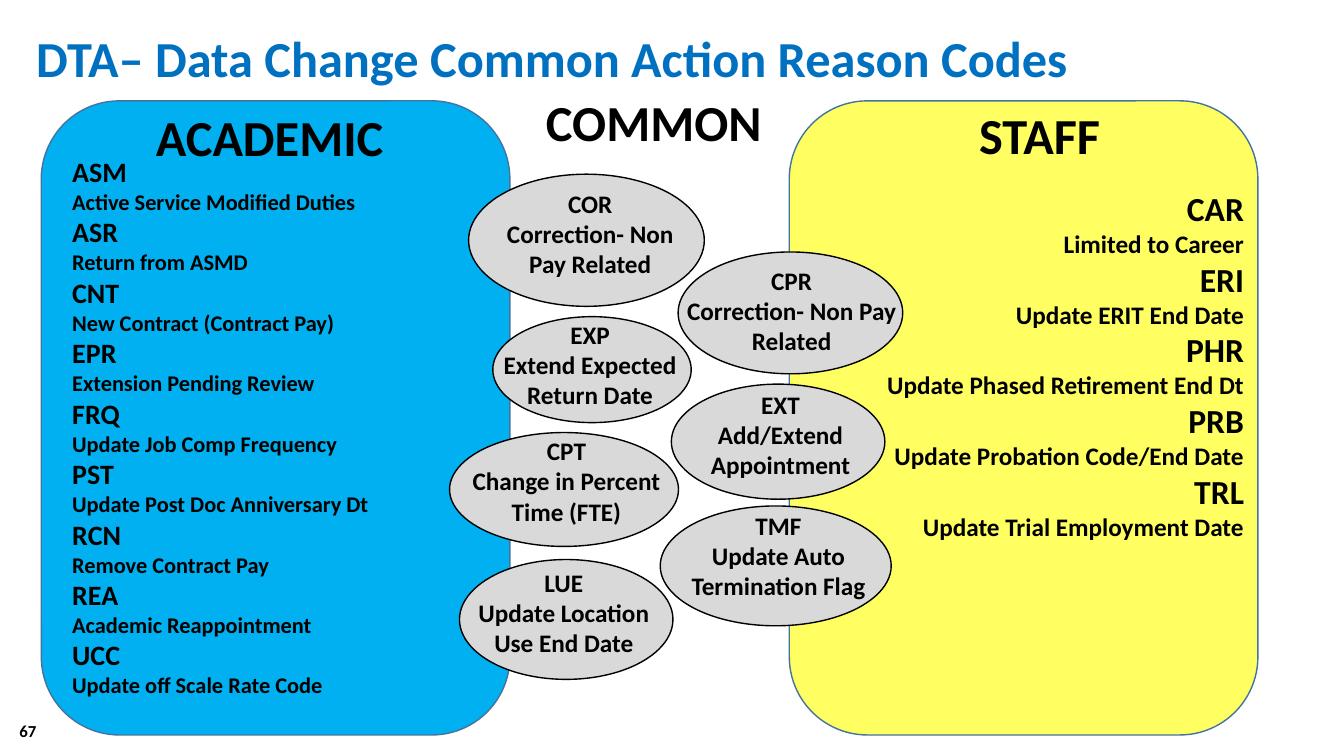
from dataclasses import dataclass

from lxml import etree
from pptx import Presentation
from pptx.dml.color import RGBColor
from pptx.enum.shapes import MSO_SHAPE
from pptx.enum.text import MSO_ANCHOR, PP_ALIGN
from pptx.oxml.ns import qn
from pptx.util import Cm, Pt

ELLIPSE = MSO_SHAPE.OVAL
ROUNDED = MSO_SHAPE.ROUNDED_RECTANGLE
LEFT, CENTER, RIGHT = PP_ALIGN.LEFT, PP_ALIGN.CENTER, PP_ALIGN.RIGHT
TOP, MIDDLE = MSO_ANCHOR.TOP, MSO_ANCHOR.MIDDLE


@dataclass(frozen=True)
class Theme:
    font: str = "Calibri"
    title: str = "0070C0"
    ink: str = "000000"
    academic: str = "00B0F0"
    staff: str = "FFFF00"
    panel_edge: str = "43739E"
    bubble: str = "D9D9D9"
    heading_size: int = 36
    bubble_size: int = 18
    number_size: int = 12
    academic_sizes: tuple = (20, 16)
    staff_sizes: tuple = (24, 18)


THEME = Theme()

ACADEMIC_CODES = [
    ("ASM", "Active Service Modified Duties"),
    ("ASR", "Return from ASMD"),
    ("CNT", "New Contract (Contract Pay)"),
    ("EPR", "Extension Pending Review"),
    ("FRQ", "Update Job Comp Frequency"),
    ("PST", "Update Post Doc Anniversary Dt"),
    ("RCN", "Remove Contract Pay"),
    ("REA", "Academic Reappointment"),
    ("UCC", "Update off Scale Rate Code"),
]
STAFF_CODES = [
    ("CAR", "Limited to Career"),
    ("ERI", "Update ERIT End Date"),
    ("PHR", "Update Phased Retirement End Dt"),
    ("PRB", "Update Probation Code/End Date"),
    ("TRL", "Update Trial Employment Date"),
]
COMMON_CODES = [
    ("COR", "Correction- Non Pay Related", (11.81, 4.39, 5.94, 3.33), (0.59, 0.23, 4.95, 3.94)),
    ("CPR", "Correction- Non Pay Related", (17.09, 6.35, 5.66, 3.07), (-0.33, 0.2, 6.38, 2.57)),
    ("EXT", "Add/Extend Appointment", (16.92, 9.68, 5.38, 2.9), (0.25, 0, 5, 2.57)),
    ("CPT", "Change in Percent Time (FTE)", (11.33, 10.9, 5.77, 2.87), (0.28, -0.05, 5.33, 3.43)),
    ("EXP", "Extend Expected Return Date", (12.42, 7.98, 5, 2.67), (0, -0.06, 4.9, 2.57)),
    ("TMF", "Update Auto Termination Flag", (16.64, 12.75, 5.82, 3.02), (0.3, -0.02, 5.36, 2.79)),
    ("LUE", "Update Location Use End Date", (11.58, 14.1, 5.38, 3.02), (0.13, 0.07, 5, 2.57)),
]


def within(box, offset):
    return box[0] + offset[0], box[1] + offset[1], offset[2], offset[3]


def add_text(shapes, box, lines, align=LEFT, color=THEME.ink, anchor=TOP):
    frame = shapes.add_textbox(*map(Cm, box)).text_frame
    frame.word_wrap = True
    frame.vertical_anchor = anchor
    for index, (words, size) in enumerate(lines):
        paragraph = frame.paragraphs[0] if index == 0 else frame.add_paragraph()
        paragraph.alignment = align
        run = paragraph.add_run()
        run.text = words
        style = {"name": THEME.font, "size": Pt(size), "bold": True}
        for attribute, value in style.items():
            setattr(run.font, attribute, value)
        run.font.color.rgb = RGBColor.from_string(color)


def add_outline(shapes, preset, box, fill, edge):
    outline = shapes.add_shape(preset, *map(Cm, box))
    outline.shadow.inherit = False
    outline.fill.solid()
    outline.fill.fore_color.rgb = RGBColor.from_string(fill)
    outline.line.color.rgb = RGBColor.from_string(edge)
    outline.line.width = Pt(1)
    return outline


def set_opacity(outline, percent):
    tint = outline.fill._xPr.find(f"{qn('a:solidFill')}/{qn('a:srgbClr')}")
    etree.SubElement(tint, qn("a:alpha"), val=str(percent * 1000))


def draw_panel(slide, box, fill, heading, heading_at, codes, codes_at, sizes, align, opacity=100):
    panel = add_outline(slide.shapes, ROUNDED, box, fill, THEME.panel_edge)
    panel.rotation = 180
    if opacity < 100:
        set_opacity(panel, opacity)
    heading_align = CENTER if align == RIGHT else LEFT
    add_text(slide.shapes, within(box, heading_at), [(heading, THEME.heading_size)], heading_align)
    lines = [line for entry in codes for line in zip(entry, sizes)]
    add_text(slide.shapes, within(box, codes_at), lines, align)


def draw_bubble(slide, box, code, meaning, label_at):
    bubble = slide.shapes.add_group_shape()
    add_outline(bubble.shapes, ELLIPSE, box, THEME.bubble, THEME.ink)
    lines = [(words, THEME.bubble_size) for words in (code, meaning)]
    add_text(bubble.shapes, within(box, label_at), lines, CENTER)


def draw_common(slide, heading_box):
    add_text(slide.shapes, heading_box, [("COMMON", THEME.heading_size)])
    for code, meaning, box, label_at in COMMON_CODES:
        draw_bubble(slide, box, code, meaning, label_at)


def draw_title(slide, box):
    title = "DTA– Data Change Common Action Reason Codes"
    add_text(slide.shapes, box, [(title, THEME.heading_size)], color=THEME.title)


def draw_number(slide, box):
    add_text(slide.shapes, box, [("67", THEME.number_size)], RIGHT, anchor=MIDDLE)


def main():
    deck = Presentation()
    deck.slide_width, deck.slide_height = Cm(33.87), Cm(19.05)
    slide = deck.slides.add_slide(deck.slide_layouts[6])
    draw_title(slide, (0.66, 0.56, 32.13, 1.8))
    draw_panel(slide, (19.89, 2.54, 11.81, 15.98), THEME.staff, "STAFF", (3.48, -0.03, 5.66, 1.8),
               STAFF_CODES, (-0.08, 2.08, 11.79, 11.96), THEME.staff_sizes, RIGHT, opacity=62)
    draw_panel(slide, (1.04, 2.54, 11.81, 15.98), THEME.academic, "ACADEMIC", (2.64, 0, 6.53, 1.8),
               ACADEMIC_CODES, (0.53, 1.22, 11.76, 14.96), THEME.academic_sizes, LEFT)
    draw_common(slide, (13.51, 2.16, 6.53, 1.8))
    draw_number(slide, (0.13, 17.83, 1.04, 1.17))
    deck.save("out.pptx")


if __name__ == "__main__":
    main()
